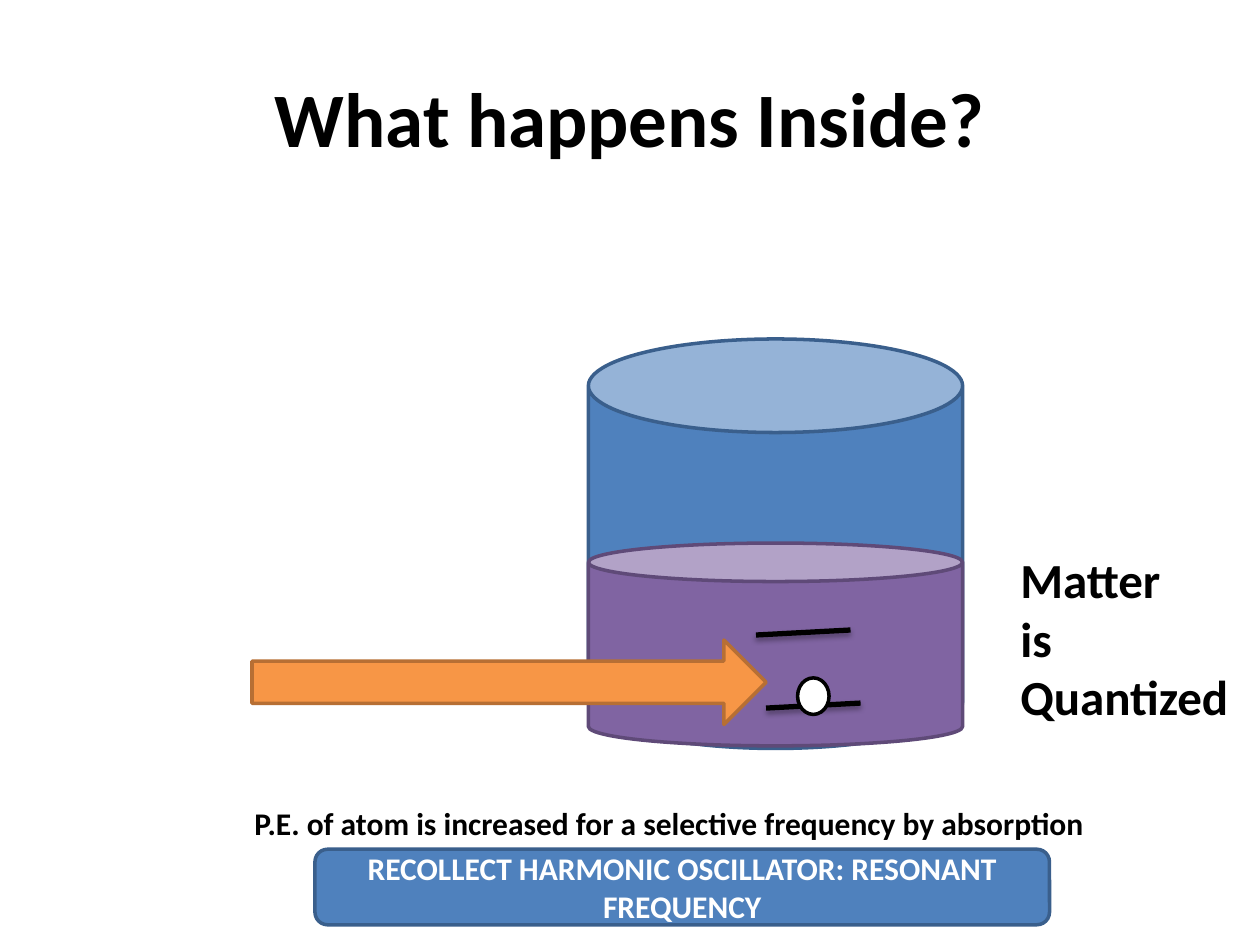
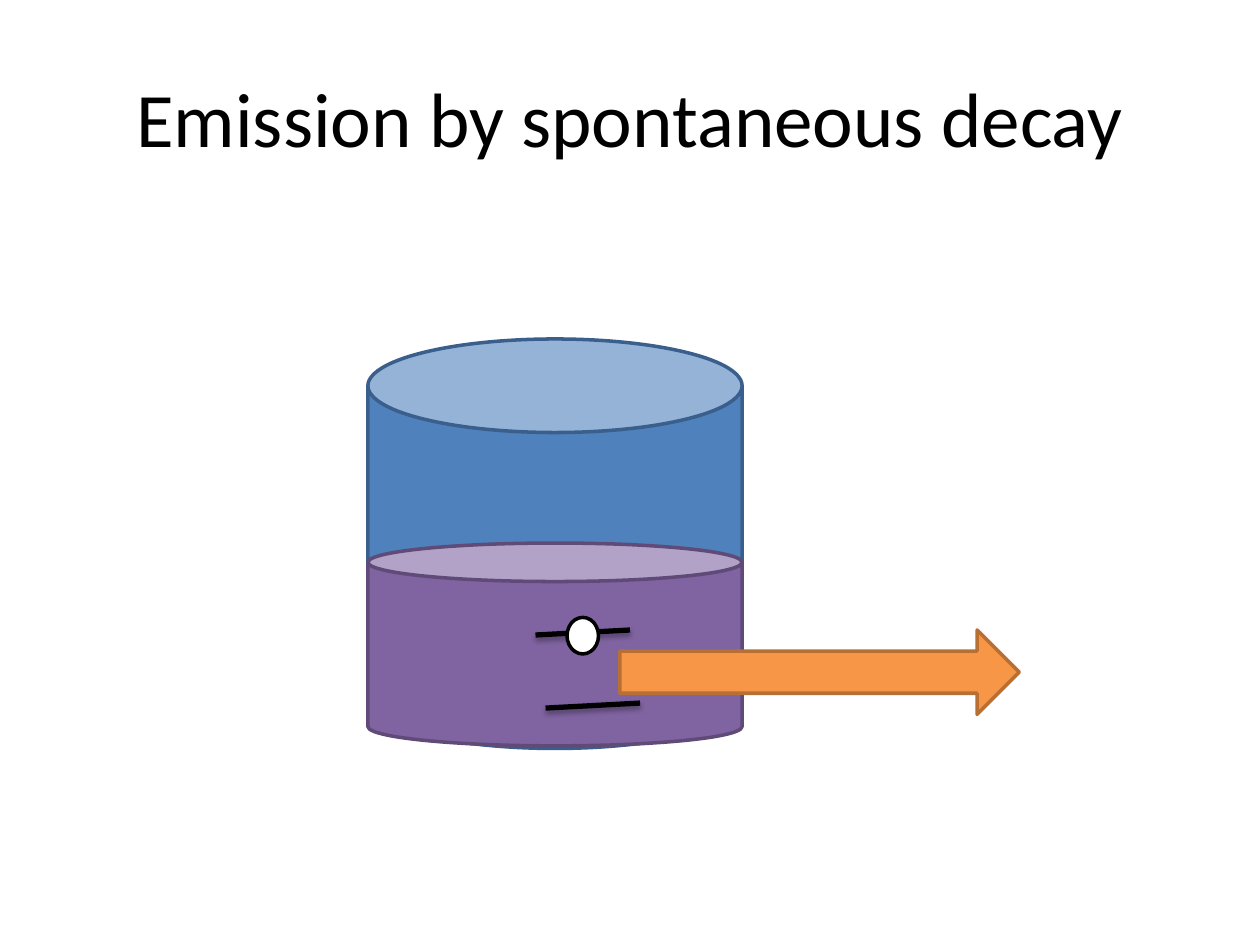
from lxml import etree
from pptx import Presentation
from pptx import util as u
from pptx.dml.color import RGBColor
from pptx.enum import shapes, text
from pptx.oxml import ns

COLORS = {
    "ink": "000000",
    "paper": "FFFFFF",
    "glass": "4F81BD",
    "glass_edge": "3A5F8C",
    "liquid": "8064A2",
    "liquid_edge": "5F4A78",
    "photon": "F79646",
    "photon_edge": "B76F34",
}
KINDS = shapes.MSO_SHAPE


class Deck:
    font = "Calibri"

    def __init__(self):
        self.presentation = Presentation()
        self.presentation.slide_width = u.Inches(10)
        self.presentation.slide_height = u.Inches(7.5)
        self.slide = None

    def color(self, name):
        return RGBColor.from_string(COLORS[name])

    def add_slide(self, heading, bold=False):
        self.slide = self.presentation.slides.add_slide(self.presentation.slide_layouts[6])
        self.label([heading], (0.5, 0.3, 9, 1.25), 44, bold, centered=True)

    def set_text(self, frame, lines, size, bold, color, centered):
        frame.text = "\n".join(lines)
        for paragraph in frame.paragraphs:
            paragraph.alignment = text.PP_ALIGN.CENTER if centered else text.PP_ALIGN.LEFT
            for run in paragraph.runs:
                run.font.name = self.font
                run.font.size = u.Pt(size)
                run.font.bold = bold
                run.font.color.rgb = self.color(color)
        if centered:
            frame.vertical_anchor = text.MSO_ANCHOR.MIDDLE

    def label(self, lines, box, size, bold=True, centered=False):
        frame = self.slide.shapes.add_textbox(*map(u.Inches, box)).text_frame
        frame.word_wrap = centered
        self.set_text(frame, lines, size, bold, "ink", centered)

    def shape(self, kind, box, fill, edge, adjustment=None):
        shape = self.slide.shapes.add_shape(kind, *map(u.Inches, box))
        shape.shadow.inherit = False
        shape.fill.solid()
        shape.fill.fore_color.rgb = self.color(fill)
        shape.line.color.rgb = self.color(edge)
        shape.line.width = u.Pt(2)
        if adjustment is not None:
            shape.adjustments[0] = adjustment
        return shape

    def banner(self, caption, box):
        banner = self.shape(KINDS.ROUNDED_RECTANGLE, box, "glass", "glass_edge")
        self.set_text(banner.text_frame, [caption], 18, True, "paper", True)

    def energy_level(self, left, top):
        ends = (left, top + 0.04, left + 0.75, top)
        level = self.slide.shapes.add_connector(
            shapes.MSO_CONNECTOR.STRAIGHT, *map(u.Inches, ends))
        level.line.color.rgb = self.color("ink")
        level.line.width = u.Pt(3)
        effects = etree.SubElement(level._element.spPr, ns.qn("a:effectLst"))
        shadow = etree.SubElement(
            effects, ns.qn("a:outerShdw"), blurRad=str(u.Pt(3.1)),
            dist=str(u.Pt(1.8)), dir="5400000", rotWithShape="0")
        tint = etree.SubElement(shadow, ns.qn("a:srgbClr"), val=COLORS["ink"])
        etree.SubElement(tint, ns.qn("a:alpha"), val="35000")

    def beaker(self, left, electron):
        self.shape(KINDS.CAN, (left, 2.69, 2.97, 3.25), "glass", "glass_edge")
        self.shape(KINDS.CAN, (left, 4.31, 2.97, 1.61), "liquid", "liquid_edge", 0.19)
        self.energy_level(left + 1.41, 5.58)
        self.energy_level(left + 1.33, 5)
        self.shape(KINDS.OVAL, (*electron, 0.25, 0.29), "paper", "ink")

    def photon(self, left, top, length):
        self.shape(KINDS.RIGHT_ARROW, (left, top, length, 0.67), "photon", "photon_edge")


def main():
    deck = Deck()

    deck.add_slide("What happens Inside?", bold=True)
    deck.beaker(4.67, electron=(6.33, 5.38))
    deck.photon(2, 5.08, 4.08)
    deck.label(["Matter", "is", "Quantized"], (8, 4.31, 1.87, 1.51), 28)
    deck.label(["P.E. of atom is increased for a selective frequency by absorption"],
               (1.92, 6.33, 6.9, 0.4), 18)
    deck.banner("RECOLLECT HARMONIC OSCILLATOR: RESONANT FREQUENCY", (2.5, 6.74, 5.83, 0.6))

    deck.add_slide("Emission by spontaneous decay")
    deck.beaker(2.92, electron=(4.5, 4.9))
    deck.photon(4.92, 5, 3.17)

    deck.presentation.save("out.pptx")


if __name__ == "__main__":
    main()
